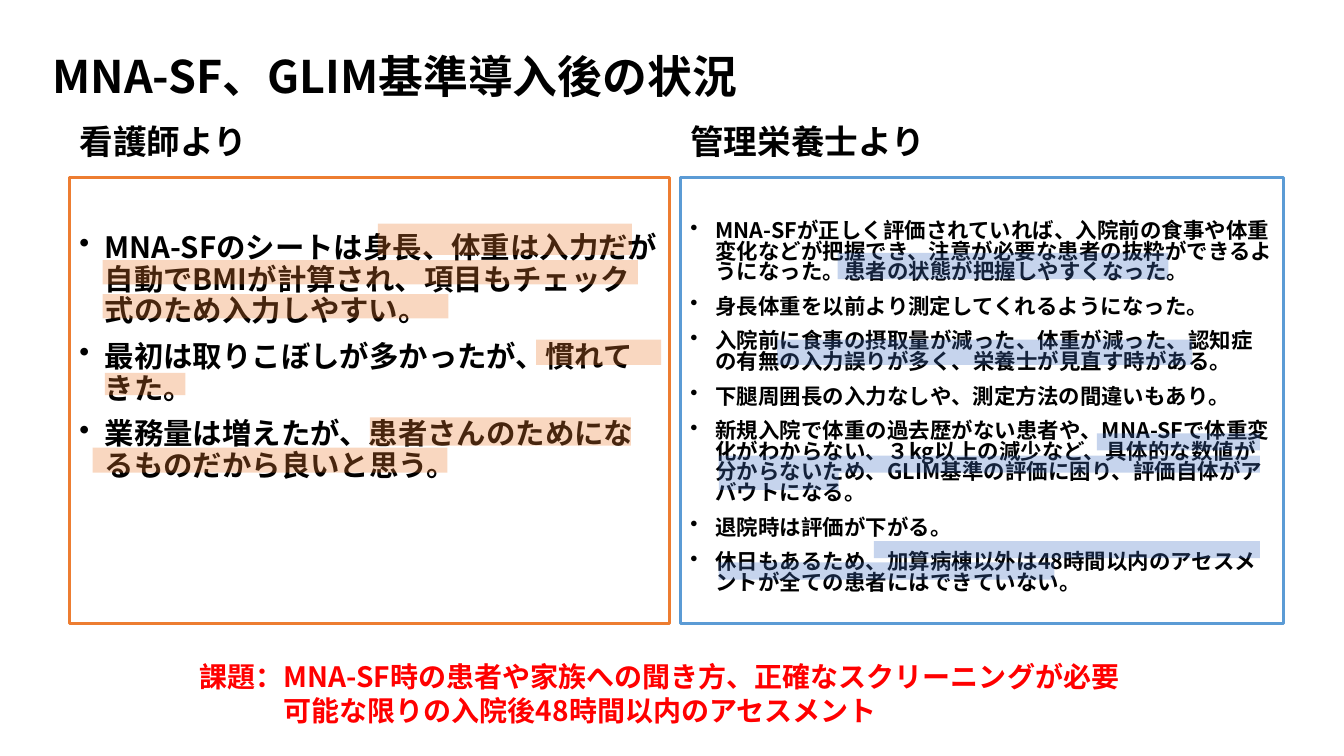
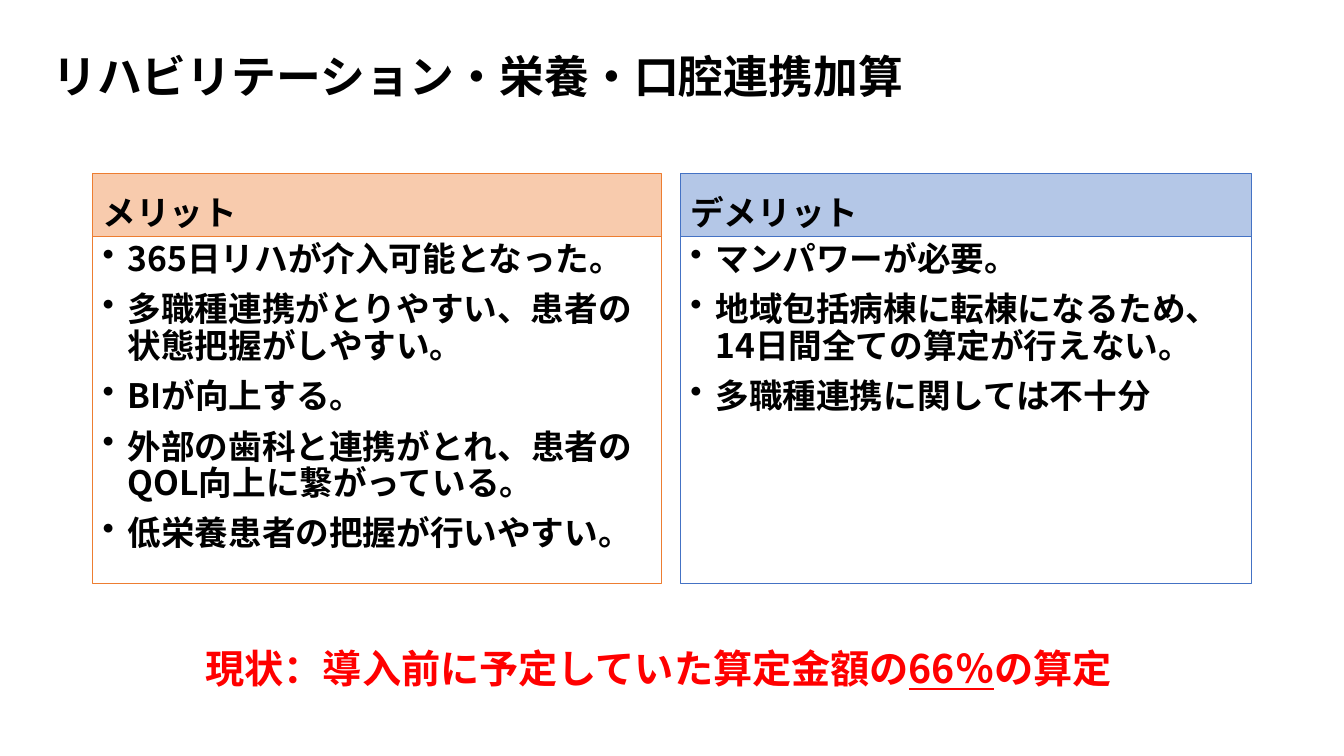
"""Build two slides on nutrition screening and the joint rehabilitation fee."""
from dataclasses import dataclass

from lxml import etree
from pptx import Presentation
from pptx.dml.color import RGBColor
from pptx.enum.shapes import MSO_SHAPE
from pptx.enum.text import MSO_ANCHOR, PP_ALIGN
from pptx.oxml.ns import qn
from pptx.util import Pt

RECT = MSO_SHAPE.RECTANGLE
TOP, BOTTOM = MSO_ANCHOR.TOP, MSO_ANCHOR.BOTTOM
LEFT = PP_ALIGN.LEFT


@dataclass(frozen=True)
class Style:
    size: float
    line: float
    before: float = 0
    color: str = "000000"
    bullet: bool = False


@dataclass(frozen=True)
class Theme:
    font: str = "Noto Sans CJK JP"
    orange: str = "ED7D31"
    blue: str = "4472C4"
    light_blue: str = "5B9BD5"
    peach: str = "F8CBAD"
    pale_blue: str = "B4C7E7"
    marker_alpha: int = 30000
    indent: float = 18
    title: Style = Style(32, 41)
    heading: Style = Style(24, 26.4)
    nurse: Style = Style(21, 22.6, 10, bullet=True)
    dietitian: Style = Style(15.3, 14.7, 10, bullet=True)
    points: Style = Style(24, 26, 10, bullet=True)
    issue: Style = Style(20, 24.4, color="FF0000")
    status: Style = Style(28, 34.2, color="FF0000")


T = Theme()

FEEDBACK_TITLE = "MNA-SF、GLIM基準導入後の状況"
FEEDBACK = [
    {
        "heading": "看護師より", "x": 49.7, "head_w": 406, "w": 428.4,
        "style": T.nurse, "top_inset": 39.7, "line": T.orange, "marker": T.orange,
        "items": [
            "MNA-SFのシートは身長、体重は入力だが自動でBMIが計算され、項目もチェック式のため入力しやすい。",
            "最初は取りこぼしが多かったが、慣れてきた。",
            "業務量は増えたが、患者さんのためになるものだから良いと思う。",
        ],
        "markers": [
            (270, 159.8, 181.4, 22.3), (73.4, 185.8, 382.3, 17.3),
            (73.4, 210.2, 247, 17.3), (383, 242.6, 89.3, 18),
            (74.9, 266.4, 57.6, 15.8), (264.2, 298.1, 186.5, 20.2),
            (66.2, 319.7, 253.4, 18),
        ],
    },
    {
        "heading": "管理栄養士より", "x": 486, "head_w": 408.2, "w": 430.6,
        "style": T.dietitian, "top_inset": 32, "line": T.light_blue, "marker": T.blue,
        "items": [
            "MNA-SFが正しく評価されていれば、入院前の食事や体重変化などが把握でき、注意が必要な患者の抜粋ができるようになった。患者の状態が把握しやすくなった。",
            "身長体重を以前より測定してくれるようになった。",
            "入院前に食事の摂取量が減った、体重が減った、認知症の有無の入力誤りが多く、栄養士が見直す時がある。",
            "下腿周囲長の入力なしや、測定方法の間違いもあり。",
            "新規入院で体重の過去歴がない患者や、MNA-SFで体重変化がわからない、３kg以上の減少など、具体的な数値が分からないため、GLIM基準の評価に困り、評価自体がアバウトになる。",
            "退院時は評価が下がる。",
            "休日もあるため、加算病棟以外は48時間以内のアセスメントが全ての患者にはできていない。",
        ],
        "markers": [
            (598.3, 180.7, 236.2, 18.7), (555.1, 242.6, 296.6, 18),
            (783.4, 309.6, 116.6, 12.2), (513.4, 325.4, 386.6, 12.2),
            (513.4, 337.7, 85.7, 12.2), (624.2, 386.6, 275.8, 12.2),
            (513.4, 401.8, 239.8, 12.2),
        ],
    },
]
ISSUES = [
    "課題：MNA-SF時の患者や家族への聞き方、正確なスクリーニングが必要",
    "可能な限りの入院後48時間以内のアセスメント",
]

FEE_TITLE = "リハビリテーション・栄養・口腔連携加算"
FEE_CARDS = [
    {
        "heading": "メリット", "x": 66.2, "w": 406, "fill": T.peach, "line": T.orange,
        "items": [
            "365日リハが介入可能となった。",
            "多職種連携がとりやすい、患者の状態把握がしやすい。",
            "BIが向上する。",
            "外部の歯科と連携がとれ、患者のQOL向上に繋がっている。",
            "低栄養患者の把握が行いやすい。",
        ],
    },
    {
        "heading": "デメリット", "x": 486, "w": 408.2, "fill": T.pale_blue, "line": T.blue,
        "items": [
            "マンパワーが必要。",
            "地域包括病棟に転棟になるため、14日間全ての算定が行えない。",
            "多職種連携に関しては不十分",
        ],
    },
]
STATUS = [("現状：導入前に予定していた算定金額の", False), ("66％", True), ("の算定", False)]


def rgb(color):
    """Turn a hex string into a colour."""
    return RGBColor.from_string(color)


def format_paragraph(p, style):
    """Apply a text style to a whole paragraph."""
    p.alignment = LEFT
    p.line_spacing, p.space_before = Pt(style.line), Pt(style.before)
    p.font.size, p.font.bold = Pt(style.size), True
    p.font.color.rgb = rgb(style.color)
    p.font.name = T.font
    props = p._p.get_or_add_pPr()
    defaults = props.find(qn("a:defRPr"))
    etree.SubElement(defaults, qn("a:ea"), typeface=T.font)
    if style.bullet:
        indent_paragraph(p, T.indent, -T.indent)
        bullet = etree.Element(qn("a:buChar"), char="•")
        defaults.addprevious(bullet)


def indent_paragraph(p, left, first=0):
    """Set the left margin and the first-line indent."""
    props = p._p.get_or_add_pPr()
    props.set("marL", str(Pt(left)))
    props.set("indent", str(Pt(first)))


def fill_text(tf, paragraphs, style, anchor=TOP):
    """Write paragraphs given as strings or as lists of (text, underlined)."""
    tf.word_wrap = True
    tf.vertical_anchor = anchor
    for i, runs in enumerate(paragraphs):
        p = tf.add_paragraph() if i else tf.paragraphs[0]
        for text, underlined in [(runs, False)] if isinstance(runs, str) else runs:
            r = p.add_run()
            r.text = text
            if underlined:
                r.font.underline = True
        format_paragraph(p, style)


def add_text(slide, box, paragraphs, style, anchor=TOP, fill=None, line=None, weight=0.75):
    """Add a text box with an optional fill and frame."""
    sp = slide.shapes.add_textbox(*map(Pt, box))
    if fill:
        sp.fill.solid()
        sp.fill.fore_color.rgb = rgb(fill)
    if line:
        sp.line.color.rgb = rgb(line)
        sp.line.width = Pt(weight)
    fill_text(sp.text_frame, paragraphs, style, anchor)
    return sp.text_frame


def add_marker(slide, box, color):
    """Add a translucent marker bar."""
    sp = slide.shapes.add_shape(RECT, *map(Pt, box))
    sp.shadow.inherit = False
    sp.fill.solid()
    sp.fill.fore_color.rgb = rgb(color)
    sp.line.fill.background()
    tint = sp._element.spPr.find(".//" + qn("a:srgbClr"))
    etree.SubElement(tint, qn("a:alpha"), val=str(T.marker_alpha))


def add_slide(prs, title, width):
    """Add a title-only slide with its title in place."""
    slide = prs.slides.add_slide(prs.slide_layouts[5])
    sp = slide.shapes.title
    sp.left, sp.top, sp.width, sp.height = map(Pt, (30.2, 28.4, width, 46))
    fill_text(sp.text_frame, [title], T.title)
    return slide


def build_feedback(prs):
    """Build the slide with feedback from nurses and dietitians."""
    slide = add_slide(prs, FEEDBACK_TITLE, 549.4)
    for col in FEEDBACK:
        add_text(slide, (col["x"], 72.7, col["head_w"], 46), [col["heading"]], T.heading, BOTTOM)
        tf = add_text(slide, (col["x"], 126.7, col["w"], 319), col["items"], col["style"],
                      line=col["line"], weight=2.25)
        tf.margin_top = Pt(col["top_inset"])
    tf = add_text(slide, (135.4, 467.3, 758.2, 55.4), ISSUES, T.issue)
    indent_paragraph(tf.paragraphs[1], 3 * T.issue.size)
    for col in FEEDBACK:
        for box in col["markers"]:
            add_marker(slide, box, col["marker"])


def build_fee(prs):
    """Build the slide with merits and demerits of the fee."""
    slide = add_slide(prs, FEE_TITLE, 737.3)
    top, head_h, body_h = 123.8, 45.4, 247.7
    for card in FEE_CARDS:
        x, w, line = card["x"], card["w"], card["line"]
        add_text(slide, (x, top, w, head_h), [card["heading"]], T.heading, BOTTOM,
                 fill=card["fill"], line=line)
        add_text(slide, (x, top + head_h, w, body_h), card["items"], T.points, line=line)
    add_text(slide, (139.7, 455.8, 685.4, 41), [STATUS], T.status)


def main():
    """Build and save the presentation."""
    prs = Presentation()
    prs.slide_width, prs.slide_height = Pt(960), Pt(540)
    build_feedback(prs)
    build_fee(prs)
    prs.save("out.pptx")


if __name__ == "__main__":
    main()
